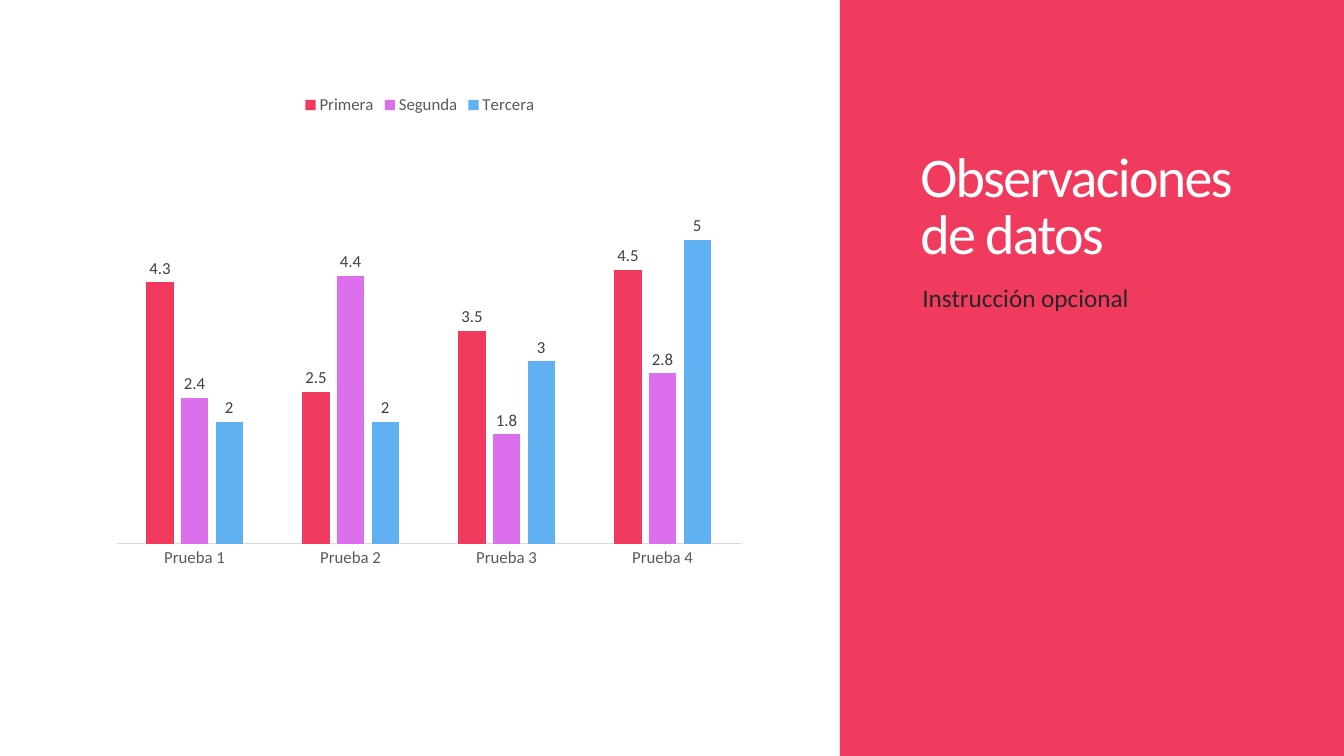
from dataclasses import dataclass

from lxml import etree
from pptx import Presentation
from pptx import util as u
from pptx.chart.chart import Chart
from pptx.chart.data import CategoryChartData
from pptx.dml.color import RGBColor
from pptx.enum import chart as chart_enum
from pptx.enum import shapes, text
from pptx.oxml import parse_xml
from pptx.oxml.ns import nsdecls
from pptx.slide import Slide
from pptx.text.text import Font


@dataclass(frozen=True)
class Theme:
    font: str = "Calibri"
    accent: str = "F03B5E"
    purple: str = "DC6FEC"
    blue: str = "60B1F2"
    white: str = "FFFFFF"
    body: str = "262626"
    data_label: str = "404040"
    axis_label: str = "595959"
    axis_line: str = "D9D9D9"
    title_size: float = 40
    body_size: float = 18
    chart_size: float = 12


@dataclass(frozen=True)
class Box:
    left: float
    top: float
    width: float
    height: float

    def lengths(self) -> tuple[u.Length, ...]:
        return tuple(u.Inches(side) for side in (self.left, self.top, self.width, self.height))


@dataclass(frozen=True)
class TextBlock:
    wording: str
    box: Box
    size: float
    color: str
    anchor: text.MSO_ANCHOR = text.MSO_ANCHOR.TOP
    line_spacing: float = 1.0
    space_before: float = 0
    tracking: float = 0


@dataclass(frozen=True)
class Series:
    name: str
    values: tuple[float, ...]
    color: str


THEME = Theme()
PANEL = Box(8.33, 0, 5, 7.5)
CHART = Box(0.83, 0.83, 6.67, 5)
PLOT = Box(0.049, 0.189, 0.928, 0.724)  # fractions of the chart area
TEXTS = (
    TextBlock("Observaciones de datos", Box(9.03, 0.59, 3.7, 2.1), THEME.title_size, THEME.white,
              anchor=text.MSO_ANCHOR.BOTTOM, line_spacing=0.85, tracking=-1.2),
    TextBlock("Instrucción opcional", Box(9.05, 2.75, 3.72, 3.42), THEME.body_size, THEME.body,
              space_before=12),
)
CATEGORIES = [f"Prueba {number}" for number in range(1, 5)]
SERIES = (
    Series("Primera", (4.3, 2.5, 3.5, 4.5), THEME.accent),
    Series("Segunda", (2.4, 4.4, 1.8, 2.8), THEME.purple),
    Series("Tercera", (2, 2, 3, 5), THEME.blue),
)


def style_font(font: Font, size: float, color: str) -> None:
    font.name = THEME.font
    font.size = u.Pt(size)
    font.color.rgb = RGBColor.from_string(color)


def add_panel(slide: Slide) -> None:
    panel = slide.shapes.add_shape(shapes.MSO_SHAPE.RECTANGLE, *PANEL.lengths())
    panel.shadow.inherit = False
    panel.fill.solid()
    panel.fill.fore_color.rgb = RGBColor.from_string(THEME.accent)
    panel.line.fill.background()


def add_text(slide: Slide, block: TextBlock) -> None:
    frame = slide.shapes.add_textbox(*block.box.lengths()).text_frame
    frame.word_wrap = True
    frame.vertical_anchor = block.anchor
    frame.text = block.wording
    paragraph = frame.paragraphs[0]
    paragraph.line_spacing = block.line_spacing
    paragraph.space_before = u.Pt(block.space_before)
    font = paragraph.runs[0].font
    style_font(font, block.size, block.color)
    if block.tracking:
        paragraph.runs[0]._r.get_or_add_rPr().set("spc", str(round(block.tracking * 100)))


def place_plot(chart: Chart) -> None:
    """Fix the inner plot area at the fractions given by PLOT."""
    plot_area = chart._chartSpace.chart.plotArea
    for automatic in plot_area.findall("{*}layout"):
        plot_area.remove(automatic)
    layout = parse_xml(f'<c:layout {nsdecls("c")}><c:manualLayout/></c:layout>')
    settings = (("layoutTarget", "inner"), ("xMode", "edge"), ("yMode", "edge"),
                ("x", PLOT.left), ("y", PLOT.top), ("w", PLOT.width), ("h", PLOT.height))
    namespace = layout.nsmap["c"]
    for tag, value in settings:
        etree.SubElement(layout[0], f"{{{namespace}}}{tag}").set("val", str(value))
    plot_area.insert(0, layout)


def style_axes(chart: Chart) -> None:
    category_axis = chart.category_axis
    category_axis.major_tick_mark = chart_enum.XL_TICK_MARK.NONE
    category_axis.format.line.color.rgb = RGBColor.from_string(THEME.axis_line)
    category_axis.format.line.width = u.Pt(0.75)
    style_font(category_axis.tick_labels.font, THEME.chart_size, THEME.axis_label)
    value_axis = chart.value_axis
    value_axis.minimum_scale, value_axis.maximum_scale = 0, 6
    value_axis.has_major_gridlines = False
    value_axis.visible = False


def add_chart(slide: Slide) -> None:
    chart_data = CategoryChartData()
    chart_data.categories = CATEGORIES
    for series in SERIES:
        chart_data.add_series(series.name, series.values)
    chart = slide.shapes.add_chart(
        chart_enum.XL_CHART_TYPE.COLUMN_CLUSTERED, *CHART.lengths(), chart_data).chart
    style_font(chart.font, THEME.chart_size, THEME.axis_label)
    chart.has_title = False
    chart.has_legend = True
    chart.legend.position = chart_enum.XL_LEGEND_POSITION.TOP
    chart.legend.include_in_layout = False
    style_font(chart.legend.font, THEME.chart_size, THEME.axis_label)

    plot = chart.plots[0]
    plot.gap_width, plot.overlap = 219, -27
    plot.vary_by_categories = False
    for series, drawn in zip(SERIES, plot.series):
        drawn.format.fill.solid()
        drawn.format.fill.fore_color.rgb = RGBColor.from_string(series.color)
        labels = drawn.data_labels
        labels.show_value = True
        labels.position = chart_enum.XL_LABEL_POSITION.OUTSIDE_END
        style_font(labels.font, THEME.chart_size, THEME.data_label)
    style_axes(chart)
    place_plot(chart)


def main() -> None:
    presentation = Presentation()
    presentation.slide_width = u.Inches(13.33)
    presentation.slide_height = u.Inches(7.5)
    slide = presentation.slides.add_slide(presentation.slide_layouts[6])
    add_panel(slide)
    add_chart(slide)
    for block in TEXTS:
        add_text(slide, block)
    presentation.save("out.pptx")


if __name__ == "__main__":
    main()
